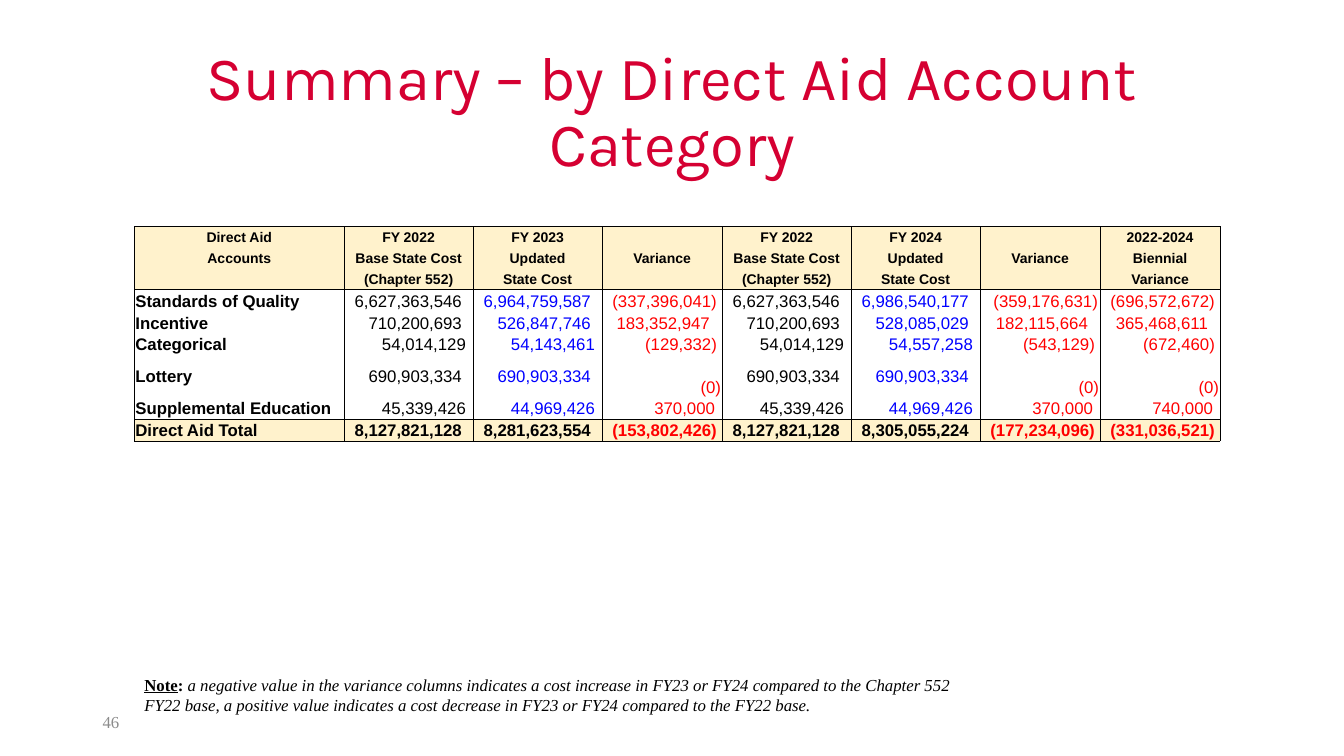
"""Build the slide that summarises Direct Aid by account category."""
from dataclasses import dataclass
from itertools import accumulate

from lxml.etree import SubElement
from pptx import Presentation
from pptx.dml.color import RGBColor
from pptx.enum.text import MSO_ANCHOR, PP_ALIGN
from pptx.oxml.ns import qn
from pptx.util import Emu, Inches, Pt

SLIDE_WIDTH, SLIDE_HEIGHT = Inches(13.33), Inches(7.5)


@dataclass(frozen=True)
class Theme:
    title: str = "D50032"
    ink: str = "000000"
    updated: str = "0000FF"
    variance: str = "FF0000"
    band: str = "FFF2CC"
    muted: str = "8C8C8C"
    title_font: str = "Karla"
    table_font: str = "Arial"
    note_font: str = "Times New Roman"
    title_size: float = 44
    header_size: float = 10
    body_size: float = 12
    rule_width: float = 0.5


@dataclass(frozen=True)
class Style:
    font: str
    size: float
    color: str
    bold: bool = False
    italic: bool = False
    underline: bool = False


@dataclass(frozen=True)
class Area:
    """A rectangle in percent of the slide's width and height."""
    left: float
    top: float
    width: float
    height: float

    def emu(self) -> tuple:
        return (across(self.left), down(self.top), across(self.width), down(self.height))


@dataclass(frozen=True)
class Account:
    """One account row; gaps are inches to the right of costs and variances."""
    name: str
    values: tuple
    cost_gap: float
    variance_gaps: tuple
    total: bool = False
    height: float = 2.9


THEME = Theme()
TITLE_AREA = Area(6.9, 5.33, 86.25, 19.33)
PAGE_AREA = Area(6.9, 92.8, 22.5, 5.33)
NOTE_AREA = Area(10, 88.53, 62.55, 6.67)
TABLE_LEFT, TABLE_TOP = 10, 30
NAME_WIDTH, COST_WIDTH, VARIANCE_WIDTH = 15.6, 9.6, 8.93
YEAR_WIDTHS = [COST_WIDTH, COST_WIDTH, VARIANCE_WIDTH]
COLUMN_WIDTHS = [NAME_WIDTH, *YEAR_WIDTHS, *YEAR_WIDTHS, VARIANCE_WIDTH]
HEADER_HEIGHT = 2.78
CELL_INSET = 0.01
VALUE_COLORS = [THEME.ink, THEME.updated, THEME.variance] * 2 + [THEME.variance]
TOTAL_COLORS = [THEME.ink, THEME.ink, THEME.variance] * 2 + [THEME.variance]

BASE = ("FY 2022", "Base State Cost", "(Chapter 552)")
VARIANCE = ("", "Variance", "")
HEADERS = [
    ("Direct Aid", "Accounts", ""),
    BASE, ("FY 2023", "Updated", "State Cost"), VARIANCE,
    BASE, ("FY 2024", "Updated", "State Cost"), VARIANCE,
    ("2022-2024", "Biennial", "Variance"),
]
ACCOUNTS = [
    Account("Standards of Quality",
            ("6,627,363,546", "6,964,759,587", "(337,396,041)", "6,627,363,546",
             "6,986,540,177", "(359,176,631)", "(696,572,672)"), 0.11, (0.05, 0.02, 0.05)),
    Account("Incentive",
            ("710,200,693", "526,847,746", "183,352,947", "710,200,693",
             "528,085,029", "182,115,664", "365,468,611"), 0.11, (0.12, 0.12, 0.12)),
    Account("Categorical",
            ("54,014,129", "54,143,461", "(129,332)", "54,014,129",
             "54,557,258", "(543,129)", "(672,460)"), 0.07, (0.05, 0.05, 0.05)),
    Account("Lottery",
            ("690,903,334", "690,903,334", "(0)", "690,903,334",
             "690,903,334", "(0)", "(0)"), 0.11, (0.01, 0.01, 0.01), height=5.5),
    Account("Supplemental Education",
            ("45,339,426", "44,969,426", "370,000", "45,339,426",
             "44,969,426", "370,000", "740,000"), 0.07, (0.07, 0.07, 0.07)),
    Account("Direct Aid Total",
            ("8,127,821,128", "8,281,623,554", "(153,802,426)", "8,127,821,128",
             "8,305,055,224", "(177,234,096)", "(331,036,521)"), 0.11,
            (0.05, 0.05, 0.05), total=True),
]


def across(percent: float) -> Emu:
    """Turn a share of the slide's width into a length."""
    return Emu(round(SLIDE_WIDTH * percent / 100))


def down(percent: float) -> Emu:
    """Turn a share of the slide's height into a length."""
    return Emu(round(SLIDE_HEIGHT * percent / 100))


def add_run(paragraph, text: str, style: Style) -> None:
    """Append one formatted run."""
    run = paragraph.add_run()
    run.text = text
    font = run.font
    font.name, font.size = style.font, Pt(style.size)
    font.bold, font.italic, font.underline = style.bold, style.italic, style.underline
    font.color.rgb = RGBColor.from_string(style.color)


def add_text(slide, area: Area, runs: list, anchor: MSO_ANCHOR) -> None:
    """Add a wrapping text box of one paragraph."""
    frame = slide.shapes.add_textbox(*area.emu()).text_frame
    frame.word_wrap = True
    frame.vertical_anchor = anchor
    for text, style in runs:
        add_run(frame.paragraphs[0], text, style)


def set_borders(cell, ruled_sides: str) -> None:
    """Rule the named sides of a cell and clear the others."""
    properties = cell._tc.get_or_add_tcPr()
    for side in "LRTB":
        line = SubElement(properties, qn(f"a:ln{side}"), w=str(Pt(THEME.rule_width)))
        if side in ruled_sides:
            fill = SubElement(line, qn("a:solidFill"))
            SubElement(fill, qn("a:srgbClr"), val=THEME.ink)
        else:
            SubElement(line, qn("a:noFill"))


def fill_cell(cell, text: str, style: Style, align: PP_ALIGN, sides: str, banded: bool,
              gap: float = CELL_INSET, anchor: MSO_ANCHOR = MSO_ANCHOR.MIDDLE) -> None:
    """Write and format one table cell."""
    set_borders(cell, sides)
    if banded:
        cell.fill.solid()
        cell.fill.fore_color.rgb = RGBColor.from_string(THEME.band)
    else:
        cell.fill.background()
    cell.margin_left = cell.margin_top = Inches(CELL_INSET)
    cell.margin_right, cell.margin_bottom = Inches(gap), 0
    cell.vertical_anchor = anchor
    paragraph = cell.text_frame.paragraphs[0]
    paragraph.alignment = align
    if text:
        add_run(paragraph, text, style)
    else:
        SubElement(paragraph._p, qn("a:endParaRPr"), sz=str(round(style.size * 100)))


def fill_account(table, row: int, account: Account) -> None:
    """Write one account's name and values."""
    first, last = row == len(HEADERS[0]), row == len(HEADERS[0]) + len(ACCOUNTS) - 2
    sides = "LR" + "T" * (first or account.total) + "B" * (last or account.total)
    name_style = Style(THEME.table_font, THEME.body_size, THEME.ink, bold=True)
    fill_cell(table.cell(row, 0), account.name, name_style, PP_ALIGN.LEFT, sides, account.total)
    year_one, year_two, biennial = account.variance_gaps
    costs = [account.cost_gap] * 2
    gaps = [*costs, year_one, *costs, year_two, biennial]
    colors = TOTAL_COLORS if account.total else VALUE_COLORS
    for column, (value, gap, color) in enumerate(zip(account.values, gaps, colors), 1):
        style = Style(THEME.table_font, THEME.body_size, color, bold=account.total)
        anchor = MSO_ANCHOR.BOTTOM if value == "(0)" else MSO_ANCHOR.MIDDLE
        fill_cell(table.cell(row, column), value, style, PP_ALIGN.RIGHT, sides,
                  account.total, gap, anchor)


def add_accounts_table(slide) -> None:
    """Add the table of costs and variances."""
    header_rows = len(HEADERS[0])
    heights = [HEADER_HEIGHT] * header_rows + [account.height for account in ACCOUNTS]
    area = Area(TABLE_LEFT, TABLE_TOP, list(accumulate(COLUMN_WIDTHS))[-1], sum(heights))
    table = slide.shapes.add_table(len(heights), len(COLUMN_WIDTHS), *area.emu()).table
    table.first_row = table.horz_banding = False
    for column, width in zip(table.columns, COLUMN_WIDTHS):
        column.width = across(width)
    for row, height in zip(table.rows, heights):
        row.height = down(height)
    header_style = Style(THEME.table_font, THEME.header_size, THEME.ink, bold=True)
    for column, lines in enumerate(HEADERS):
        for row, (text, sides) in enumerate(zip(lines, ("LRT", "LR", "LRB"))):
            fill_cell(table.cell(row, column), text, header_style, PP_ALIGN.CENTER, sides, True)
    for row, account in enumerate(ACCOUNTS, header_rows):
        fill_account(table, row, account)


def add_title(slide, text: str) -> None:
    """Place and format the title placeholder."""
    title = slide.shapes.title
    title.left, title.top, title.width, title.height = TITLE_AREA.emu()
    title.text_frame.vertical_anchor = MSO_ANCHOR.MIDDLE
    paragraph = title.text_frame.paragraphs[0]
    paragraph.alignment, paragraph.line_spacing = PP_ALIGN.CENTER, 0.9
    add_run(paragraph, text, Style(THEME.title_font, THEME.title_size, THEME.title))


def main() -> None:
    """Build and save the presentation."""
    deck = Presentation()
    deck.slide_width, deck.slide_height = SLIDE_WIDTH, SLIDE_HEIGHT
    slide = deck.slides.add_slide(deck.slide_layouts[5])
    add_title(slide, "Summary – by Direct Aid Account Category")
    page_style = Style(THEME.note_font, THEME.body_size, THEME.muted)
    add_text(slide, PAGE_AREA, [("46", page_style)], MSO_ANCHOR.MIDDLE)
    note = THEME.note_font, THEME.body_size, THEME.ink
    add_text(slide, NOTE_AREA, [
        ("Note", Style(*note, bold=True, underline=True)),
        (": ", Style(*note, bold=True)),
        ("a negative value in the variance columns indicates a cost increase in FY23 or FY24 "
         "compared to the Chapter 552 FY22 base, a positive value indicates a cost decrease "
         "in FY23 or FY24 compared to the FY22 base.", Style(*note, italic=True)),
    ], MSO_ANCHOR.TOP)
    add_accounts_table(slide)
    deck.save("out.pptx")


if __name__ == "__main__":
    main()
